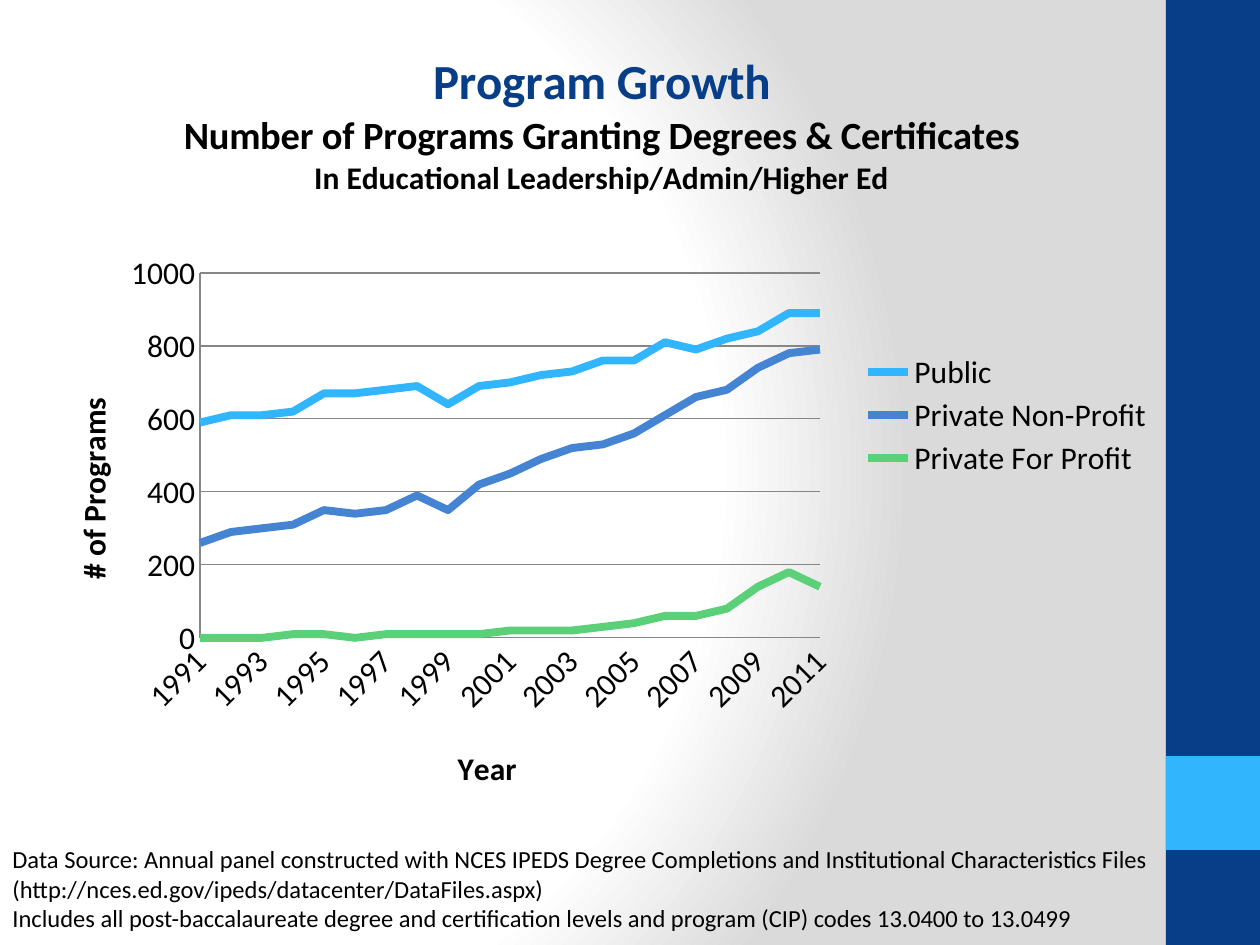
from lxml.etree import SubElement
from pptx import Presentation
from pptx.chart.data import XyChartData
from pptx.dml.color import RGBColor
from pptx.enum.chart import XL_CHART_TYPE, XL_LEGEND_POSITION, XL_TICK_MARK
from pptx.enum.shapes import MSO_SHAPE
from pptx.enum.text import MSO_AUTO_SIZE, PP_ALIGN
from pptx.oxml import parse_xml
from pptx.oxml.ns import nsdecls, qn
from pptx.util import Pt

PX = 914400 // 126
FONT = "Calibri"
COLORS = {
    "navy": "073E87", "sky": "31B6FD", "blue": "4584D3", "green": "5BD078",
    "black": "000000", "axis": "868686", "white": "FFFFFF", "gray": "DADADA",
}
SIDEBAR = [((1166, 0, 94, 945), "navy"), ((1166, 756, 94, 94), "sky")]

CHART_BOX = (29, 21, 1137, 788)
PLOT_BOX = (200, 273, 620, 365)
LEGEND_BOX = (862, 348, 290, 134)
TITLE_AT, X_TITLE_AT, Y_TITLE_AT = (180, 47), (452, 741), (66, 392)

TITLE = [
    ("Program Growth", 28, "navy"),
    ("Number of Programs Granting Degrees & Certificates", 22, "black"),
    ("In Educational Leadership/Admin/Higher Ed", 18, "black"),
]
YEARS = range(1991, 2012)
SERIES = [
    ("Public", "sky", [590, 610, 610, 620, 670, 670, 680, 690, 640, 690, 700,
                       720, 730, 760, 760, 810, 790, 820, 840, 890, 890]),
    ("Private Non-Profit", "blue", [260, 290, 300, 310, 350, 340, 350, 390, 350, 420, 450,
                                    490, 520, 530, 560, 610, 660, 680, 740, 780, 790]),
    ("Private For Profit", "green", [0, 0, 0, 10, 10, 0, 10, 10, 10, 10, 20,
                                     20, 20, 30, 40, 60, 60, 80, 140, 180, 140]),
]
SOURCE_BOX = (0, 838, 1229, 102)
SOURCE_LINES = [
    "Data Source: Annual panel constructed with NCES IPEDS Degree Completions "
    "and Institutional Characteristics Files",
    "(http://nces.ed.gov/ipeds/datacenter/DataFiles.aspx)",
    "Includes all post-baccalaureate degree and certification levels and program (CIP) "
    "codes 13.0400 to 13.0499",
]


def emu(box):
    return [length * PX for length in box]


def color(name):
    return RGBColor.from_string(COLORS[name])


def style_font(font, size=18, name="black", bold=False):
    font.name, font.size, font.bold = FONT, Pt(size), bold
    font.color.rgb = color(name)


def write_lines(text_frame, lines, bold=False, align=PP_ALIGN.LEFT):
    """Write (text, size, color) lines, one paragraph each."""
    for index, (text, size, name) in enumerate(lines):
        paragraph = text_frame.add_paragraph() if index else text_frame.paragraphs[0]
        paragraph.alignment = align
        run = paragraph.add_run()
        run.text = text
        style_font(run.font, size, name, bold)


def place(element, box, inner=False):
    """Give a chart part a manual layout from slide px: (left, top[, width, height])."""
    for old in element.findall(qn("c:layout")):
        element.remove(old)
    left, top, width, height = CHART_BOX
    values = [(box[0] - left) / width, (box[1] - top) / height]
    if len(box) == 4:
        values += [box[2] / width, box[3] / height]
    layout = parse_xml(f'<c:layout {nsdecls("c")}><c:manualLayout/></c:layout>')
    manual = layout[0]
    if inner:
        SubElement(manual, qn("c:layoutTarget")).set("val", "inner")
    for tag in ("xMode", "yMode"):
        SubElement(manual, qn(f"c:{tag}")).set("val", "edge")
    for tag, value in zip("xywh", values):
        SubElement(manual, qn(f"c:{tag}")).set("val", f"{value:.4f}")
    overlay = element.find(qn("c:overlay"))
    if overlay is None:
        element.insert(0, layout)
    else:
        overlay.addprevious(layout)


def set_background(slide):
    fill = slide.background.fill
    fill.solid()
    stops = "".join(
        f'<a:gs pos="{position * 1000}"><a:srgbClr val="{COLORS[name]}"/></a:gs>'
        for position, name in [(0, "white"), (75, "white"), (100, "gray")])
    gradient = parse_xml(
        f'<a:gradFill {nsdecls("a")} rotWithShape="1"><a:gsLst>{stops}</a:gsLst>'
        '<a:path path="circle"><a:fillToRect l="20000" t="50000" r="100000" b="50000"/>'
        '</a:path></a:gradFill>')
    properties = slide.background._cSld.bg.bgPr
    properties.replace(properties.find(qn("a:solidFill")), gradient)


def format_axis(axis, title, title_at, low, high, step, grid, rotation):
    axis.minimum_scale, axis.maximum_scale, axis.major_unit = low, high, step
    axis.major_tick_mark = axis.minor_tick_mark = XL_TICK_MARK.NONE
    axis.has_major_gridlines = grid
    lines = [axis.format.line]
    if grid:
        lines.append(axis.major_gridlines.format.line)
    for line in lines:
        line.color.rgb, line.width = color("axis"), Pt(0.75)
    labels = axis.tick_labels
    labels.number_format, labels.number_format_is_linked = "General", False
    style_font(labels.font)
    axis._element.find(qn("c:txPr")).find(qn("a:bodyPr")).set("rot", str(rotation * 60000))
    write_lines(axis.axis_title.text_frame, [(title, 18, "black")], bold=True)
    place(axis.axis_title._element, title_at)


def add_growth_chart(slide):
    data = XyChartData()
    for name, _, values in SERIES:
        series = data.add_series(name)
        for year, value in zip(YEARS, values):
            series.add_data_point(year, value)
    chart = slide.shapes.add_chart(
        XL_CHART_TYPE.XY_SCATTER_LINES_NO_MARKERS, *emu(CHART_BOX), data).chart
    style_font(chart.font)
    chart.plots[0].vary_by_categories = False
    for series, (_, name, _) in zip(chart.plots[0].series, SERIES):
        series.smooth = False
        series.format.line.color.rgb, series.format.line.width = color(name), Pt(4.5)

    chart.has_title = True
    write_lines(chart.chart_title.text_frame, TITLE, bold=True, align=PP_ALIGN.CENTER)
    place(chart.chart_title._element, TITLE_AT)
    place(chart._chartSpace.chart.plotArea, PLOT_BOX, inner=True)

    chart.has_legend = True
    chart.legend.position = XL_LEGEND_POSITION.RIGHT
    chart.legend.include_in_layout = False
    style_font(chart.legend.font)
    place(chart.legend._element, LEGEND_BOX)

    format_axis(chart.category_axis, "Year", X_TITLE_AT, 1991, 2011, 2, False, -45)
    format_axis(chart.value_axis, "# of Programs", Y_TITLE_AT, 0, 1000, 200, True, 0)
    body = chart.value_axis.axis_title.text_frame._txBody.bodyPr
    body.set("rot", "-5400000")
    body.set("vert", "horz")


def main():
    presentation = Presentation()
    presentation.slide_width, presentation.slide_height = emu((1260, 945))
    slide = presentation.slides.add_slide(presentation.slide_layouts[6])
    set_background(slide)
    for box, name in SIDEBAR:
        bar = slide.shapes.add_shape(MSO_SHAPE.RECTANGLE, *emu(box))
        bar.shadow.inherit = False
        bar.fill.solid()
        bar.fill.fore_color.rgb = color(name)
        bar.line.fill.background()
    add_growth_chart(slide)
    source = slide.shapes.add_textbox(*emu(SOURCE_BOX)).text_frame
    source.word_wrap = True
    source.auto_size = MSO_AUTO_SIZE.SHAPE_TO_FIT_TEXT
    write_lines(source, [(line, 14, "black") for line in SOURCE_LINES])
    presentation.save("out.pptx")


if __name__ == "__main__":
    main()
